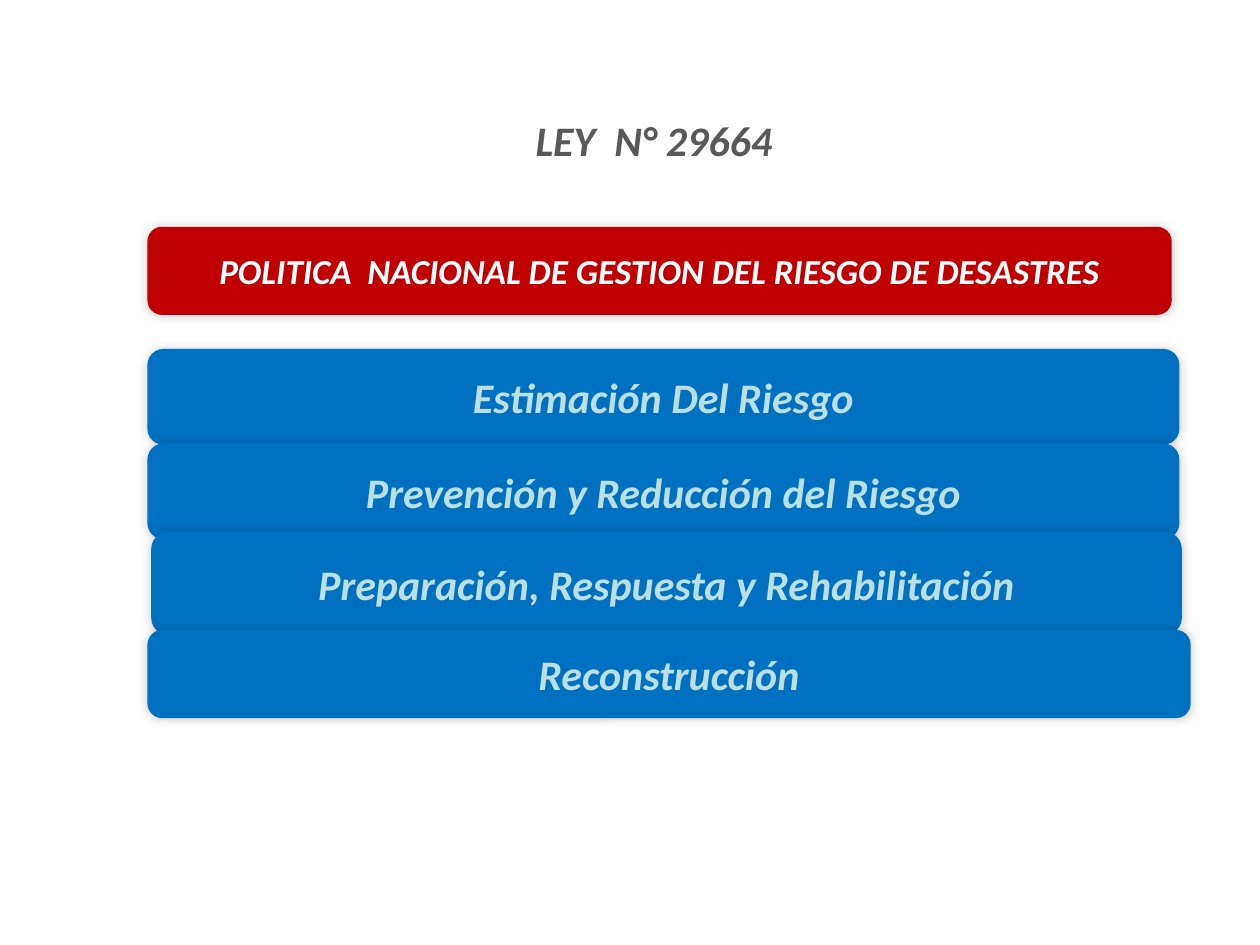
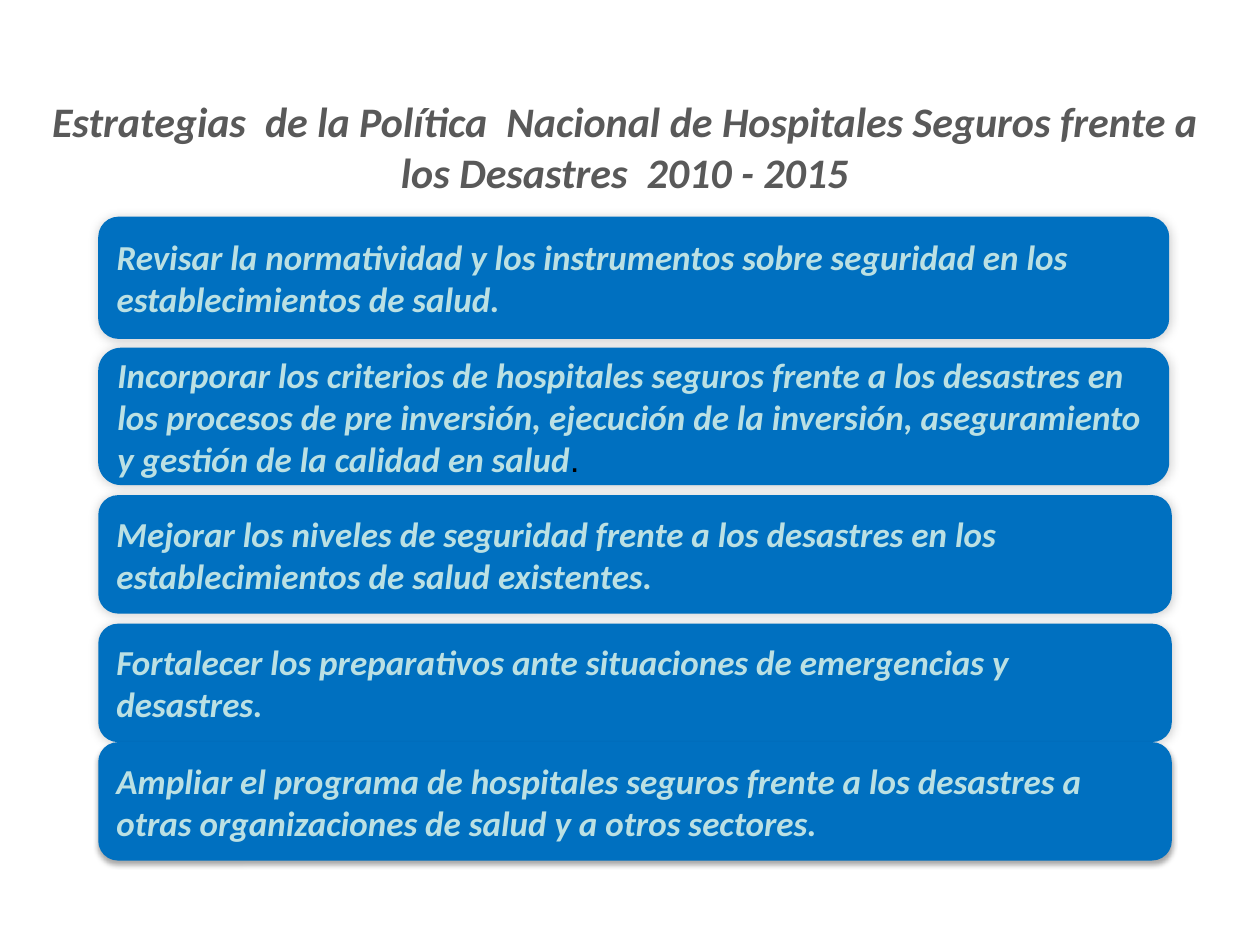
from pptx import Presentation, util as u
from pptx.dml import color
from pptx.enum import shapes, text
from pptx.oxml import parse_xml
from pptx.oxml.ns import nsdecls

PX = 9144  # EMU in one px, 100 px to the inch
BLUE, RED, PALE = "0070C0", "C00000", "BBE0E3"
WHITE, GREY, BLACK = "FFFFFF", "595959", "000000"
LEFT, MID = text.PP_ALIGN.LEFT, text.PP_ALIGN.CENTER
GLOW = (20, 6, 0, 315)  # opacity %, blur pt, distance pt, angle
DROP = (35, 3.1, 1.8, 90)


def rgb(code):
    return color.RGBColor.from_string(code)


class Deck:
    def __init__(self, wide, high):
        self.prs = Presentation()
        self.prs.slide_width, self.prs.slide_height = wide * PX, high * PX
        self.slide = None

    def page(self):
        self.slide = self.prs.slides.add_slide(self.prs.slide_layouts[6])

    def box(self, *area):
        return [n * PX for n in area]

    def font(self, run, size, ink, name="Calibri", strong=True):
        font = run.font
        font.name, font.size = name, u.Pt(size)
        font.bold = font.italic = strong
        font.color.rgb = rgb(ink)

    def label(self, shape, words, size, ink, align):
        frame = shape.text_frame
        frame.word_wrap = True
        frame.text = words
        para = frame.paragraphs[0]
        para.alignment = align
        self.font(para.runs[0], size, ink)
        return para

    def title(self, words, *area):
        shape = self.slide.shapes.add_textbox(*self.box(*area))
        self.label(shape, words, 24, GREY, MID)

    def shade(self, shape, alpha, blur, dist, angle):
        shape.shadow.inherit = False
        glow = parse_xml(
            f'<a:outerShdw {nsdecls("a")} blurRad="{u.Pt(blur)}" dist="{u.Pt(dist)}" '
            f'dir="{angle * 60000}" algn="ctr" rotWithShape="0"><a:srgbClr val="{BLACK}">'
            f'<a:alpha val="{alpha * 1000}"/></a:srgbClr></a:outerShdw>')
        shape.element.spPr.find("{*}effectLst").append(glow)

    def card(self, words, *area, size=20, ink=PALE, fill=BLUE, align=LEFT, shade=GLOW):
        kind = shapes.MSO_SHAPE.ROUNDED_RECTANGLE
        shape = self.slide.shapes.add_shape(kind, *self.box(*area))
        shape.fill.solid()
        shape.fill.fore_color.rgb = rgb(fill)
        shape.line.fill.background()
        self.shade(shape, *shade)
        shape.text_frame.vertical_anchor = text.MSO_ANCHOR.MIDDLE
        return self.label(shape, words, size, ink, align)


def law(deck):
    deck.page()
    deck.title("LEY  N° 29664", 70, 86, 898, 50)

    # Stages of risk management
    for words, *area in (
        ("Estimación Del Riesgo", 117, 277, 819, 76),
        ("Prevención y Reducción del Riesgo", 117, 352, 819, 76),
        ("Preparación, Respuesta y Rehabilitación", 120, 422, 818, 82),
        ("Reconstrucción", 117, 500, 828, 70),
    ):
        deck.card(words, *area, size=24, align=MID)

    # Policy banner
    deck.card("POLITICA  NACIONAL DE GESTION DEL RIESGO DE DESASTRES",
              117, 180, 813, 70, ink=WHITE, fill=RED, align=MID)


def plan(deck):
    deck.page()
    deck.title("Estrategias  de la Política  Nacional de Hospitales Seguros "
               "frente a los Desastres  2010 - 2015", 31, 71, 930, 91)

    # Strategies: top, width, height, shadow
    paras = [deck.card(words, 78, *area, shade=shade) for words, *area, shade in (
        ("Revisar la normatividad y los instrumentos sobre seguridad en los "
         "establecimientos de salud.", 172, 850, 97, GLOW),
        ("Incorporar los criterios de hospitales seguros frente a los desastres en "
         "los procesos de pre inversión, ejecución de la inversión, aseguramiento "
         "y gestión de la calidad en salud", 276, 850, 109, GLOW),
        ("Mejorar los niveles de seguridad frente a los desastres en los "
         "establecimientos de salud existentes.", 393, 852, 94, GLOW),
        ("Fortalecer los preparativos ante situaciones de emergencias y "
         "desastres.", 495, 852, 94, GLOW),
        ("Ampliar el programa de hospitales seguros frente a los desastres a "
         "otras organizaciones de salud y a otros sectores.", 589, 852, 94, DROP),
    )]

    # Plain full stop after the second strategy
    stop = paras[1].add_run()
    stop.text = "."
    deck.font(stop, 20, BLACK, "Arial", False)


def main():
    deck = Deck(1000, 750)
    law(deck)
    plan(deck)
    deck.prs.save("out.pptx")


if __name__ == "__main__":
    main()
